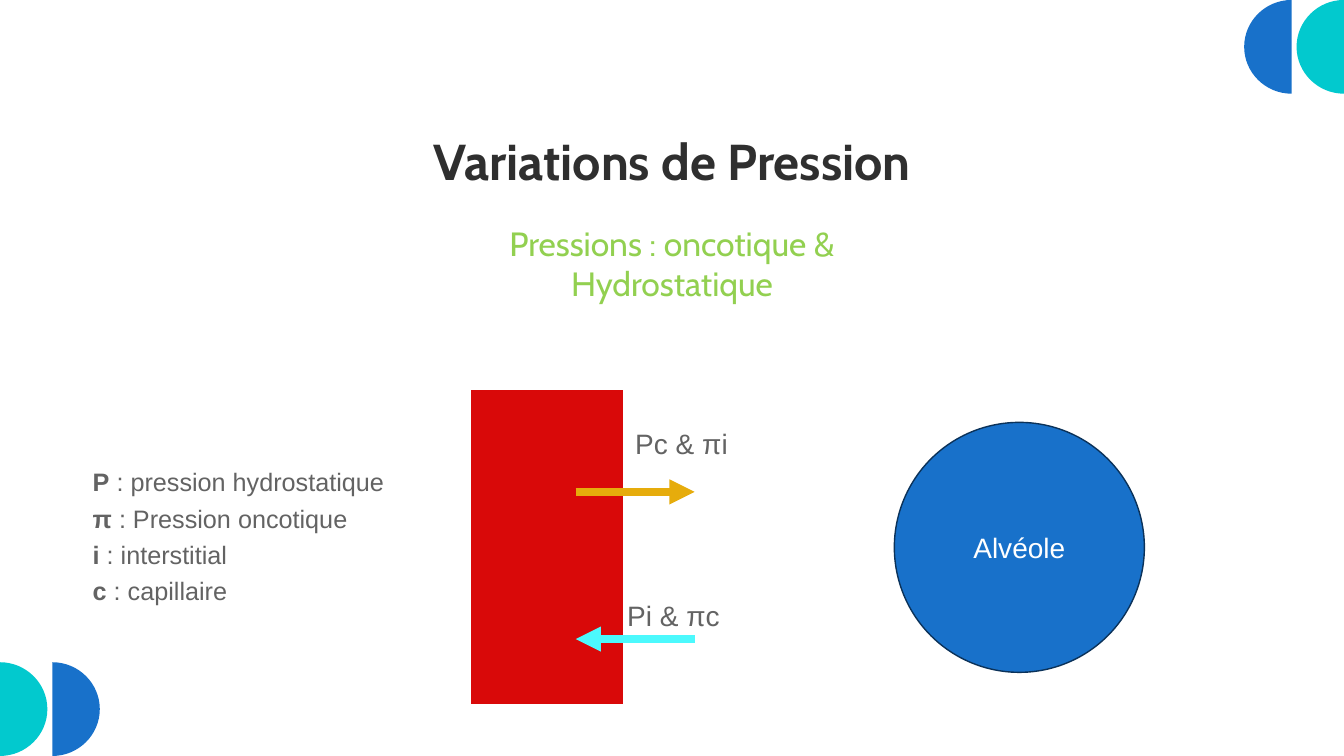
"""Build the slide on oncotic and hydrostatic pressure variations."""
from lxml.etree import SubElement
from pptx import Presentation
from pptx.dml.color import RGBColor
from pptx.enum.shapes import MSO_CONNECTOR as CONN, MSO_SHAPE as SHAPE
from pptx.enum.text import MSO_ANCHOR as ANCHOR, PP_ALIGN as ALIGN
from pptx.oxml.ns import qn
from pptx.util import Inches, Pt

WIDTH, HEIGHT = 13.33, 7.5
BLUE, TEAL, GREY, WHITE = "1871CA", "02C9CE", "636363", "FFFFFF"
DISC_W, DISC_H = 0.47, 0.93
ARC = 0.55

HALF_DISCS = [
    (12.81, 0, -1, BLUE),
    (WIDTH, 0, -1, TEAL),
    (0, HEIGHT - DISC_H, 1, TEAL),
    (0.52, HEIGHT - DISC_H, 1, BLUE),
]
HEADINGS = [
    ("Variations de Pression", (0.92, 0.97, 11.49, 1.24), 36, "2F2F2F", True, ANCHOR.MIDDLE),
    ("Pressions : oncotique & Hydrostatique", (4.46, 1.97, 4.41, 1.04), 24, "92D050", False, ANCHOR.BOTTOM),
]
CAPILLARY = (4.66, 3.86, 1.53, 3.14)
ALVEOLUS = (8.87, 4.19, 2.48, 2.48)
FLOWS = [
    ("Pc & πi", (6.3, 3.91, 1.31, 0.91), 5.71, 6.89, 4.88, "E6AC0C"),
    ("Pi & πc", (6.22, 5.62, 1.31, 0.91), 6.89, 5.71, 6.34, "4CF9FD"),
]
LEGEND_BOX = (0.92, 4.3, 3.34, 1.98)
LEGEND = [
    ("P", "pression hydrostatique"),
    ("π", "Pression oncotique"),
    ("i", "interstitial"),
    ("c", "capillaire"),
]


def rgb(color):
    return RGBColor.from_string(color)


def write(tf, paragraphs, size, color, font="Arial", align=ALIGN.LEFT, anchor=ANCHOR.MIDDLE, spacing=1.0):
    tf.word_wrap = True
    tf.vertical_anchor = anchor
    for i, runs in enumerate(paragraphs):
        p = tf.add_paragraph() if i else tf.paragraphs[0]
        p.alignment = align
        p.line_spacing = spacing
        for text, bold in runs:
            r = p.add_run()
            r.text = text
            r.font.name = font
            r.font.size = Pt(size)
            r.font.bold = bold
            r.font.color.rgb = rgb(color)


def add_text(slide, box, paragraphs, size, color, **style):
    tf = slide.shapes.add_textbox(*map(Inches, box)).text_frame
    tf.margin_left = tf.margin_top = tf.margin_right = tf.margin_bottom = 0
    write(tf, paragraphs, size, color, **style)


def paint(sp, fill, line=None, width=1):
    sp.shadow.inherit = False
    sp.fill.solid()
    sp.fill.fore_color.rgb = rgb(fill)
    if line:
        sp.line.color.rgb = rgb(line)
        sp.line.width = Pt(width)
    else:
        sp.line.fill.background()


def add_half_disc(slide, x, top, side, color):
    outline = [(x, top), (x, top + DISC_H), (x + side * DISC_W, top + DISC_H / 2), (x, top)]
    points = [(Inches(px), Inches(py)) for px, py in outline]
    builder = slide.shapes.build_freeform(*points[0])
    builder.add_line_segments(points[1:], close=True)
    sp = builder.convert_to_shape()
    paint(sp, color)

    bottom, tip, end = sp._element.findall(".//" + qn("a:lnTo"))
    at = [(int(seg[0].get("x")), int(seg[0].get("y"))) for seg in (bottom, tip, end)]
    for seg, a, b, edge in ((tip, at[0], at[1], at[0]), (end, at[1], at[2], at[2])):
        corner = at[1][0], edge[1]
        controls = [[round(v + ARC * (c - v)) for v, c in zip(pt, corner)] for pt in (a, b)]
        curve = SubElement(seg.getparent(), qn("a:cubicBezTo"))
        for px, py in (*controls, b):
            SubElement(curve, qn("a:pt"), x=str(px), y=str(py))
        seg.getparent().replace(seg, curve)


def add_arrow(slide, start, end, y, color):
    line = slide.shapes.add_connector(CONN.STRAIGHT, Inches(start), Inches(y), Inches(end), Inches(y))
    line.line.color.rgb = rgb(color)
    line.line.width = Pt(6)
    SubElement(line.line._get_or_add_ln(), qn("a:tailEnd"), type="triangle")
    SubElement(line._element.spPr, qn("a:effectLst"))


def main():
    prs = Presentation()
    prs.slide_width, prs.slide_height = Inches(WIDTH), Inches(HEIGHT)
    slide = prs.slides.add_slide(prs.slide_layouts[6])

    for disc in HALF_DISCS:
        add_half_disc(slide, *disc)
    for text, box, size, color, bold, anchor in HEADINGS:
        add_text(slide, box, [[(text, bold)]], size, color, font="Cabin", align=ALIGN.CENTER, anchor=anchor)

    capillary = slide.shapes.add_shape(SHAPE.RECTANGLE, *map(Inches, CAPILLARY))
    paint(capillary, "D90909", WHITE, 1.5)
    alveolus = slide.shapes.add_shape(SHAPE.OVAL, *map(Inches, ALVEOLUS))
    paint(alveolus, BLUE, "0B3259")
    write(alveolus.text_frame, [[("Alvéole", False)]], 20, WHITE, align=ALIGN.CENTER)

    for label, box, start, end, y, color in FLOWS:
        add_arrow(slide, start, end, y, color)
        add_text(slide, box, [[(label, False)]], 20, GREY, spacing=1.2)
    legend = [[(symbol, True), (f" : {meaning}", False)] for symbol, meaning in LEGEND]
    add_text(slide, LEGEND_BOX, legend, 18, GREY, spacing=1.2)

    prs.save("out.pptx")


if __name__ == "__main__":
    main()
